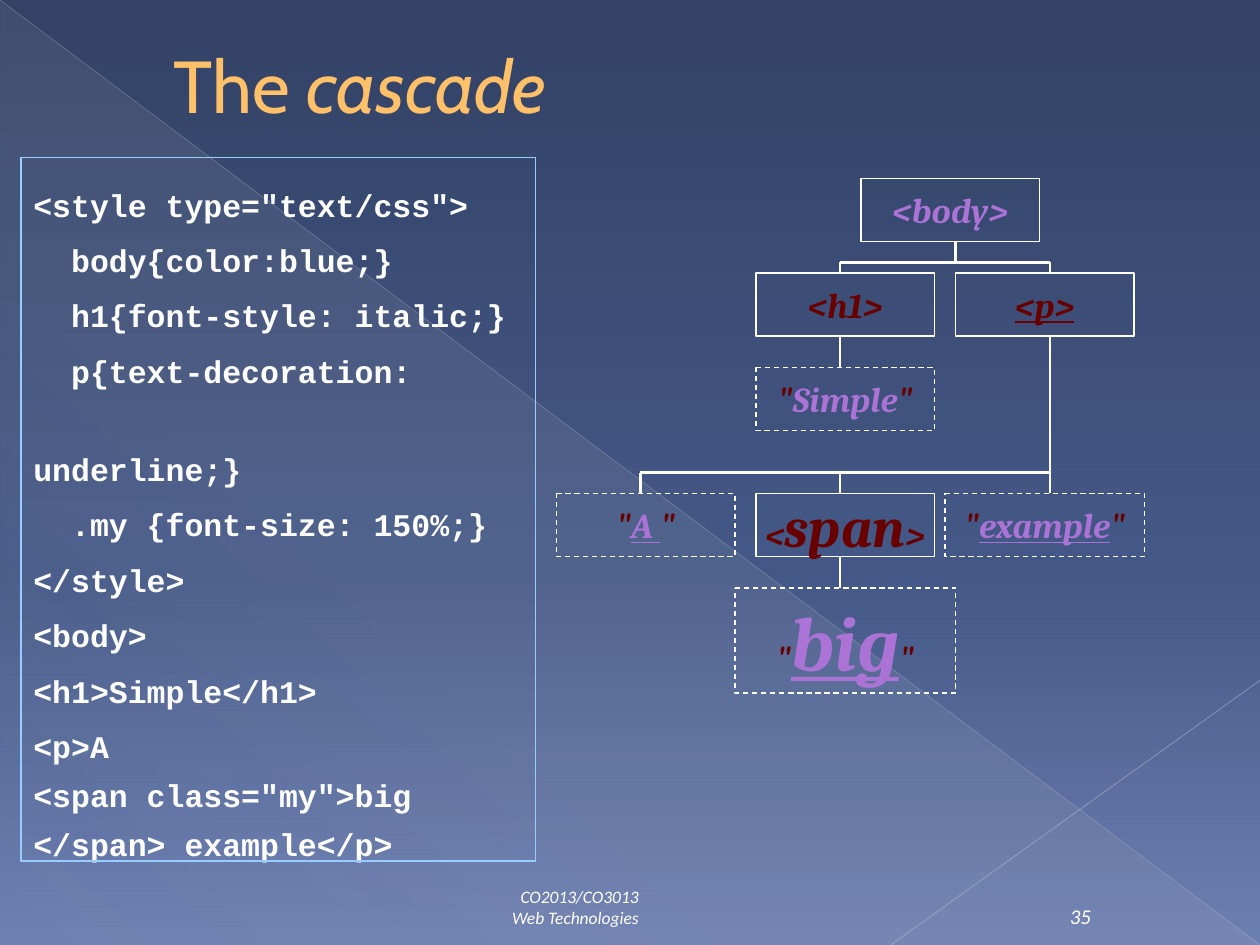
from lxml import etree
from pptx import Presentation
from pptx.dml.color import RGBColor
from pptx.enum.dml import MSO_LINE_DASH_STYLE as Dash
from pptx.enum.shapes import MSO_CONNECTOR, MSO_SHAPE
from pptx.enum.text import MSO_ANCHOR as Anchor, MSO_AUTO_SIZE, PP_ALIGN as Align
from pptx.oxml.ns import qn
from pptx.util import Inches, Pt

# The slide is a grid of 120 columns by 90 rows
CELL = Inches(1) / 12
COLUMNS, ROWS = 120, 90
WHITE, PURPLE, MAROON = "FFFFFF", "AB73D5", "680000"

CODE = [  # text, indent in characters, space before in points
    ('<style type="text/css">', 0, 3.6),
    ("body{color:blue;}", 2, 3.6),
    ("h1{font-style: italic;}", 2, 3.6),
    ("p{text-decoration:", 2, 3.6),
    ("underline;}", 0, 28),
    (".my {font-size: 150%;}", 2, 3.6),
    ("</style>", 0, 3.6),
    ("<body>", 0, 3.6),
    ("<h1>Simple</h1>", 0, 3.6),
    ('<p>A\v<span class="my">big </span> example</p>', 0, 3.6),
]

ELEMENTS = [  # box, runs of (text, size, colour, underlined)
    ((30, 2, 17, 6), [("<body>", 20, PURPLE, False)]),
    ((20, 11, 17, 6), [("<h1>", 20, MAROON, False)]),
    ((39, 11, 17, 6), [("<p>", 20, MAROON, True)]),
    ((20, 32, 17, 6), [("<", 20, MAROON, False), ("span", 32, MAROON, False),
                       (">", 20, MAROON, False)]),
]
TEXT_NODES = [  # box, quoted text, size, underlined
    ((20, 20, 17, 6), "Simple", 20, False),
    ((1, 32, 17, 6), "A ", 20, True),
    ((38, 32, 19, 6), "example", 20, True),
    ((18, 41, 21, 10), "big", 44, True),
]
BRANCHES = [  # parent column, parent bottom, bar row, child top, child columns
    (39, 8, 10, 11, (28, 48)),
    (28, 17, None, 20, ()),
    (48, 17, 30, 32, (9, 28, 48)),
    (28, 38, None, 41, ()),
]


def cells(*counts):
    return [round(count * CELL) for count in counts]


def rgb(value):
    return RGBColor.from_string(value)


def set_alpha(colour, percent):
    etree.SubElement(colour, qn("a:alpha"), val=str(percent * 1000))


def set_gradient(fill, owner, stops, angle):
    """Give the fill stops of (position, colour, opacity)."""
    fill.gradient()
    gradient = next(owner.iter(qn("a:gradFill")))
    stop_list = gradient.find(qn("a:gsLst"))
    for old in list(stop_list):
        stop_list.remove(old)
    for position, value, opacity in stops:
        stop = etree.SubElement(stop_list, qn("a:gs"), pos=str(position * 1000))
        set_alpha(etree.SubElement(stop, qn("a:srgbClr"), val=value), opacity)
    gradient.find(qn("a:lin")).set("ang", str(angle * 60000))


def add_line(slide, start, end, width=1.5, colour=WHITE, opacity=100):
    line = slide.shapes.add_connector(MSO_CONNECTOR.STRAIGHT, *cells(*start, *end))
    line.line.color.rgb = rgb(colour)
    line.line.width = Pt(width)
    properties = line.element.spPr
    if opacity < 100:
        set_alpha(next(properties.iter(qn("a:srgbClr"))), opacity)
    etree.SubElement(properties, qn("a:effectLst"))


def add_outline(slide, preset, box, colour):
    shape = slide.shapes.add_shape(preset, *cells(*box))
    shape.shadow.inherit = False
    shape.fill.background()
    shape.line.color.rgb = rgb(colour)
    shape.line.width = Pt(0.75)
    return shape


def style(run, font, size, colour, bold=False, italic=False, underline=False):
    run.font.name = font
    run.font.size = Pt(size)
    run.font.color.rgb = rgb(colour)
    run.font.bold, run.font.italic, run.font.underline = bold, italic, underline


def add_backdrop(slide, width, height):
    background = slide.background
    set_gradient(background.fill, slide.element,
                 [(0, "334265", 100), (60, "445887", 100), (100, "6C7FB1", 100)], 90)
    glow = slide.shapes.add_shape(MSO_SHAPE.RIGHT_TRIANGLE, *cells(0, 0, width, height))
    glow.shadow.inherit = False
    glow.line.fill.background()
    set_gradient(glow.fill, glow.element,
                 [(0, "D4D4D6", 10), (70, "D4D4D6", 8), (100, "D4D4D6", 1)], 133)
    add_line(slide, (0, 0), (width, height), 0.39, "B9BDC8", 35)
    add_line(slide, (width, 0.72 * height), (0.707 * width, height), 0.47, "C1C4CE", 45)


def add_title(slide, box):
    title = slide.shapes.title
    slide.shapes.element.append(title.element)  # in front of the backdrop
    title.left, title.top, title.width, title.height = cells(*box)
    frame = title.text_frame
    frame.auto_size = MSO_AUTO_SIZE.NONE
    frame.vertical_anchor = Anchor.MIDDLE
    heading = frame.paragraphs[0]
    heading.alignment = Align.LEFT
    indent = heading._p.get_or_add_pPr()
    indent.set("marL", str(Inches(0.53)))
    indent.set("indent", "0")
    for text, italic in (("The ", False), ("cascade", True)):
        run = heading.add_run()
        run.text = text
        style(run, "Cabin", 42, "FFC06A", italic=italic)


def add_footer(slide, box, text, size, alignment):
    footer = slide.shapes.add_textbox(*cells(*box)).text_frame
    footer.word_wrap = True
    footer.vertical_anchor = Anchor.BOTTOM
    line = footer.paragraphs[0]
    line.text = text
    line.alignment = alignment
    for run in line.runs:
        style(run, "Calibri", size, WHITE, italic=True)


def add_code(slide, box):
    left, top, width, height = box
    frame = slide.shapes.add_textbox(*cells(left, top + 1, width, height - 3)).text_frame
    frame.word_wrap = True
    for number, (text, indent, before) in enumerate(CODE):
        line = frame.add_paragraph() if number else frame.paragraphs[0]
        line.text = text
        line.line_spacing = 1.3
        line.space_before = Pt(before)
        line._p.get_or_add_pPr().set("indent", str(Inches(0.15 * indent)))
        for run in line.runs:
            style(run, "Courier New", 18, WHITE, bold=True)
    add_outline(slide, MSO_SHAPE.RECTANGLE, box, "99CCFF")


def add_node(slide, box, runs, dashed):
    node = add_outline(slide, MSO_SHAPE.FLOWCHART_PROCESS, box, WHITE)
    if dashed:
        node.line.dash_style = Dash.DASH
    frame = node.text_frame
    frame.word_wrap = False
    frame.vertical_anchor = Anchor.MIDDLE
    label = frame.paragraphs[0]
    label.alignment = Align.CENTER
    for text, size, colour, underline in runs:
        run = label.add_run()
        run.text = text
        style(run, "Cambria", size, colour, True, True, underline)


def add_tree(slide, left, top):
    def place(box):
        return (left + box[0], top + box[1], *box[2:])

    def link(*ends):
        add_line(slide, *map(place, ends))

    for box, runs in ELEMENTS:
        add_node(slide, place(box), runs, dashed=False)
    quote = ('"', 20, MAROON, False)
    for box, text, size, underline in TEXT_NODES:
        runs = [quote, (text, size, PURPLE, underline), quote]
        add_node(slide, place(box), runs, dashed=True)

    # Branches from each parent to its children
    for parent, bottom, bar, child_top, children in BRANCHES:
        link((parent, bottom), (parent, bar or child_top))
        if children:
            link((children[0], bar), (children[-1], bar))
        for child in children:
            link((child, bar), (child, child_top))


def main():
    deck = Presentation()
    deck.slide_width, deck.slide_height = cells(COLUMNS, ROWS)
    slide = deck.slides.add_slide(deck.slide_layouts[5])
    add_backdrop(slide, COLUMNS, ROWS)
    add_title(slide, (9, 3, 102, 10))
    add_footer(slide, (6, 85, 56, 4), "CO2013/CO3013\vWeb Technologies", 10, Align.RIGHT)
    add_footer(slide, (99.6, 85, 6.6, 4), "35", 12, Align.CENTER)
    add_code(slide, (2, 15, 49, 67))
    add_tree(slide, 52, 15)
    deck.save("out.pptx")


if __name__ == "__main__":
    main()
